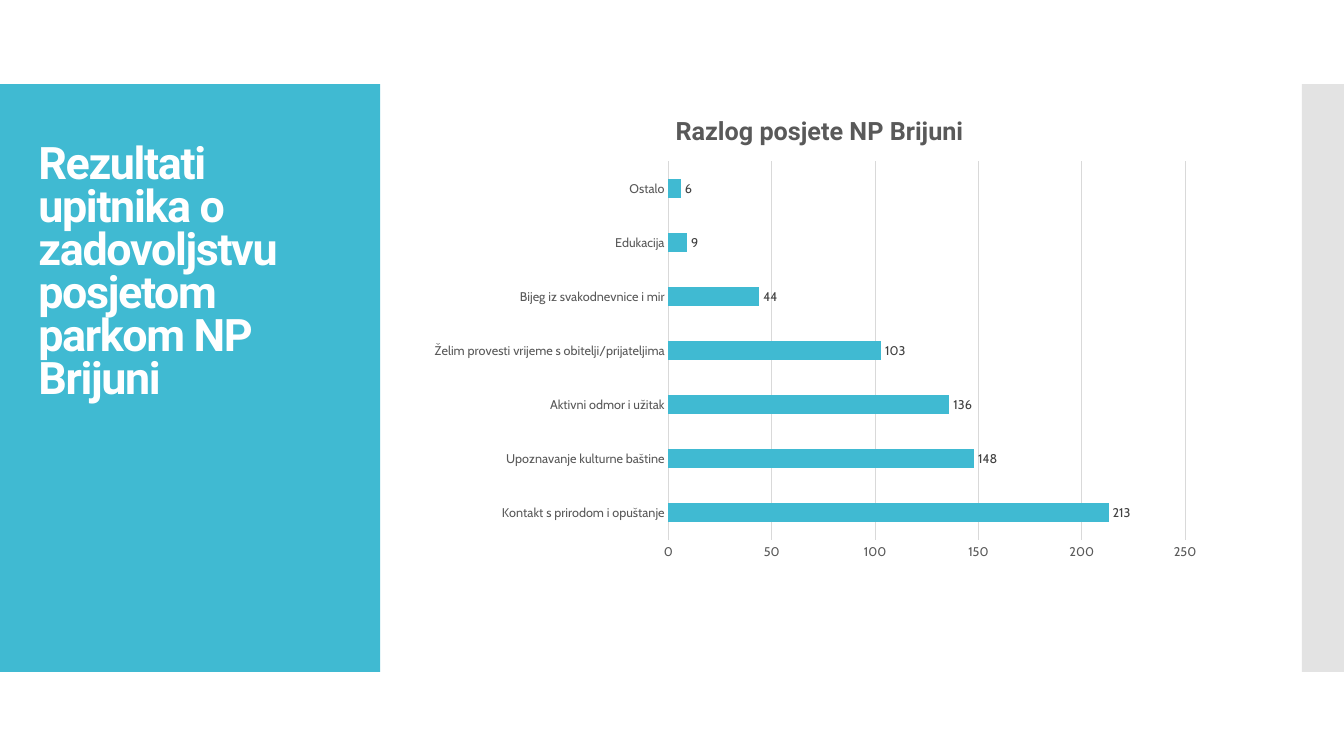
from dataclasses import dataclass

from lxml.etree import SubElement
from pptx import Presentation
from pptx.chart.data import CategoryChartData
from pptx.dml.color import RGBColor
from pptx.enum.chart import XL_CHART_TYPE as ChartType
from pptx.enum.chart import XL_LABEL_POSITION as LabelPos
from pptx.enum.chart import XL_TICK_MARK as TickMark
from pptx.enum.shapes import MSO_SHAPE as Shape
from pptx.enum.text import MSO_ANCHOR as Anchor
from pptx.enum.text import MSO_AUTO_SIZE as AutoSize
from pptx.oxml import parse_xml
from pptx.oxml.ns import nsdecls, qn
from pptx.util import Pt

PX = 9525  # EMU in one px, 96 px to the inch


@dataclass(frozen=True)
class Theme:
    accent: str = "40BAD2"
    side: str = "C8C8C8"
    white: str = "FFFFFF"
    text: str = "595959"
    label: str = "404040"
    grid: str = "D9D9D9"
    head_font: str = "Roboto"
    body_font: str = "Cabin"
    title_size: int = 32
    chart_title_size: int = 18
    chart_size: int = 10
    label_size: int = 9


@dataclass(frozen=True)
class Box:
    x: int
    y: int
    w: int
    h: int

    def emu(self) -> tuple[int, ...]:
        return tuple(v * PX for v in (self.x, self.y, self.w, self.h))


@dataclass(frozen=True)
class Panel:
    box: Box
    color: str
    alpha: int = 100


THEME = Theme()
PANELS = [
    Panel(Box(0, 80, 362, 560), THEME.accent),
    Panel(Box(1240, 80, 40, 560), THEME.side, alpha=50),
]
TITLE = "Rezultati upitnika o zadovoljstvu posjetom parkom NP Brijuni"
TITLE_BOX = Box(27, 118, 309, 271)
CHART_TITLE = "Razlog posjete NP Brijuni"
CHART_BOX = Box(402, 90, 757, 456)
PLOT_AREA = {"x": 0.31, "y": 0.14, "w": 0.65, "h": 0.79}  # shares of the chart
REASONS = {
    "Kontakt s prirodom i opuštanje": 213,
    "Upoznavanje kulturne baštine": 148,
    "Aktivni odmor i užitak": 136,
    "Želim provesti vrijeme s obitelji/prijateljima": 103,
    "Bijeg iz svakodnevnice i mir": 44,
    "Edukacija": 9,
    "Ostalo": 6,
}


def assign(obj, values: dict) -> None:
    for name, value in values.items():
        setattr(obj, name, value)


def set_font(font, name: str, size: int, color: str, bold: bool = False) -> None:
    assign(font, {"name": name, "size": Pt(size), "bold": bold})
    font.color.rgb = RGBColor.from_string(color)


def set_line(line, color: str) -> None:
    line.width = Pt(0.75)
    line.color.rgb = RGBColor.from_string(color)


def add_panel(slide, panel: Panel) -> None:
    sp = slide.shapes.add_shape(Shape.RECTANGLE, *panel.box.emu())
    sp.shadow.inherit = False
    sp.line.fill.background()
    sp.fill.solid()
    sp.fill.fore_color.rgb = RGBColor.from_string(panel.color)
    if panel.alpha < 100:
        color = sp.fill._xPr.find(qn("a:solidFill"))[0]
        SubElement(color, qn("a:alpha")).set("val", str(panel.alpha * 1000))


def set_title(slide) -> None:
    sp = slide.shapes.title
    assign(sp, dict(zip(("left", "top", "width", "height"), TITLE_BOX.emu())))
    tf = sp.text_frame
    assign(tf, {"word_wrap": True, "auto_size": AutoSize.NONE,
                "vertical_anchor": Anchor.BOTTOM})
    p = tf.paragraphs[0]
    assign(p, {"line_spacing": 0.8, "space_before": Pt(0)})
    p.alignment = 1  # left
    r = p.add_run()
    r.text = TITLE
    set_font(r.font, THEME.head_font, THEME.title_size, THEME.white, bold=True)
    r.font._element.set("spc", "-100")


def place_plot(chart) -> None:
    plot_area = chart._chartSpace.chart.plotArea
    for old in plot_area.findall(qn("c:layout")):
        plot_area.remove(old)
    modes = '<c:layoutTarget val="inner"/><c:xMode val="edge"/><c:yMode val="edge"/>'
    sizes = "".join(f'<c:{k} val="{v}"/>' for k, v in PLOT_AREA.items())
    plot_area.insert(0, parse_xml(
        f'<c:layout {nsdecls("c")}><c:manualLayout>{modes}{sizes}'
        "</c:manualLayout></c:layout>"))


def add_reasons_chart(slide) -> None:
    data = CategoryChartData()
    data.categories = list(REASONS)
    data.add_series("Series 1", list(REASONS.values()))
    chart = slide.shapes.add_chart(
        ChartType.BAR_CLUSTERED, *CHART_BOX.emu(), data).chart
    chart.has_legend = False
    set_font(chart.font, THEME.body_font, THEME.chart_size, THEME.text)
    place_plot(chart)

    # Chart title
    chart.has_title = True
    chart.chart_title.include_in_layout = False
    r = chart.chart_title.text_frame.paragraphs[0].add_run()
    r.text = CHART_TITLE
    set_font(r.font, THEME.head_font, THEME.chart_title_size, THEME.text, bold=True)

    # Axes
    cat, val = chart.category_axis, chart.value_axis
    for axis in (cat, val):
        assign(axis, {"major_tick_mark": TickMark.NONE,
                      "minor_tick_mark": TickMark.NONE})
        set_font(axis.tick_labels.font, THEME.body_font, THEME.label_size, THEME.text)
    cat.has_major_gridlines = False
    set_line(cat.format.line, THEME.grid)
    assign(val, {"minimum_scale": 0, "maximum_scale": 250, "major_unit": 50,
                 "has_major_gridlines": True})
    set_line(val.major_gridlines.format.line, THEME.grid)
    val.format.line.fill.background()

    # Bars and their values
    plot = chart.plots[0]
    assign(plot, {"gap_width": 182, "vary_by_categories": False,
                  "has_data_labels": True})
    fill = plot.series[0].format.fill
    fill.solid()
    fill.fore_color.rgb = RGBColor.from_string(THEME.accent)
    labels = plot.data_labels
    assign(labels, {"show_value": True, "position": LabelPos.OUTSIDE_END})
    set_font(labels.font, THEME.body_font, THEME.label_size, THEME.label)


def main() -> None:
    prs = Presentation()
    assign(prs, {"slide_width": 1280 * PX, "slide_height": 720 * PX})
    slide = prs.slides.add_slide(prs.slide_layouts.get_by_name("Title Only"))
    for panel in PANELS:
        add_panel(slide, panel)
    # Bring the title in front of the panels
    slide.shapes._spTree.append(slide.shapes.title._element)
    set_title(slide)
    add_reasons_chart(slide)
    prs.save("out.pptx")


if __name__ == "__main__":
    main()
